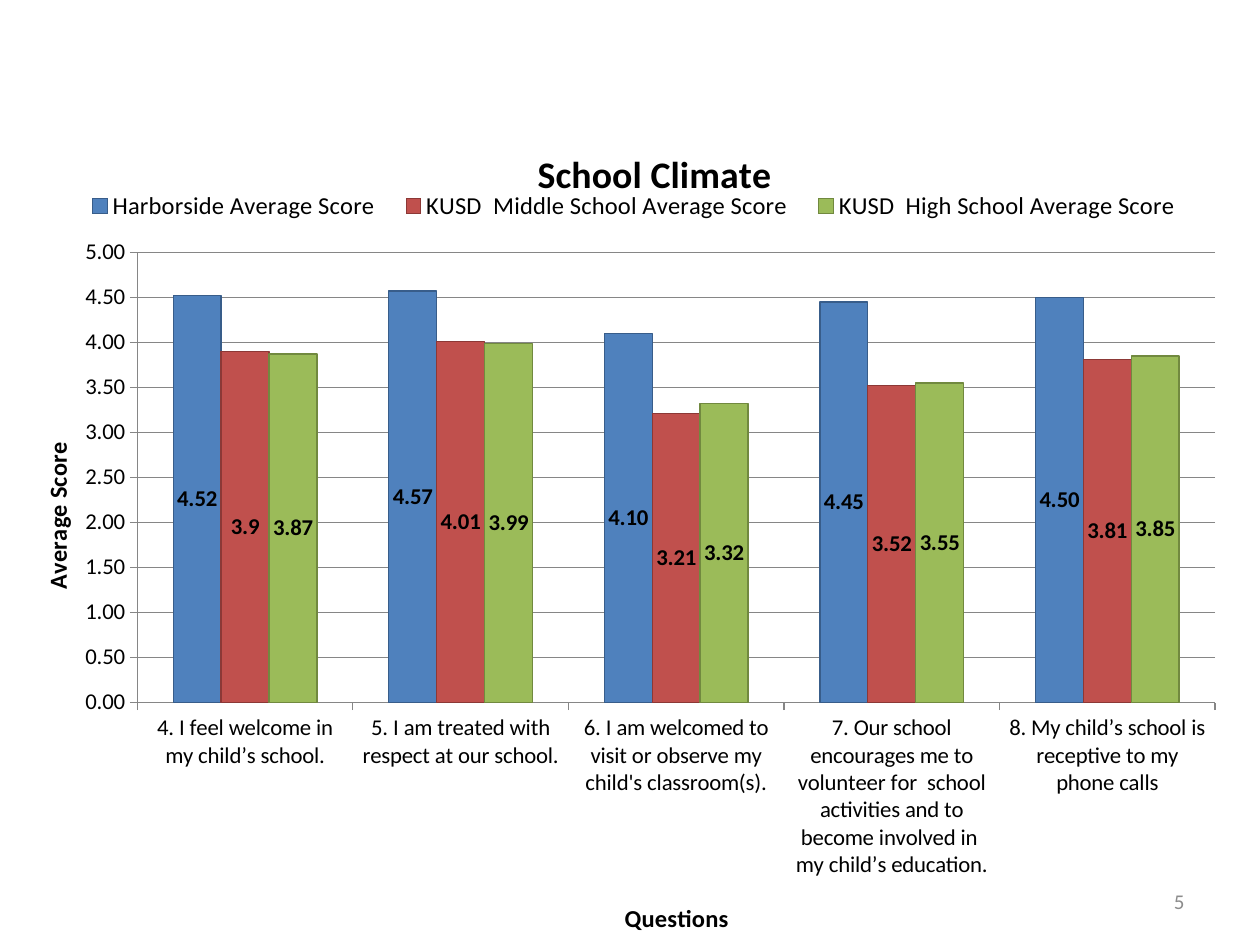
from lxml.etree import SubElement
from pptx import Presentation
from pptx.chart.data import CategoryChartData
from pptx.dml.color import RGBColor
from pptx.enum.chart import XL_CHART_TYPE, XL_LABEL_POSITION, XL_LEGEND_POSITION, XL_TICK_MARK
from pptx.enum.text import MSO_ANCHOR, PP_ALIGN
from pptx.oxml.ns import qn
from pptx.util import Inches, Pt

THEME = {
    "font": "Calibri",
    "text": RGBColor.from_string("000000"),
    "muted": RGBColor.from_string("8C8C8C"),
    "grid": RGBColor.from_string("868686"),
    "plot": RGBColor.from_string("FFFFFF"),
    "title": Pt(21.6),
    "legend": Pt(14),
    "label": Pt(13),
    "number": Pt(12),
    "line": Pt(0.75),
}


def style_font(font, size, color="text", bold=False):
    formats = {"name": THEME["font"], "size": THEME[size], "bold": bold}
    for attribute, value in formats.items():
        setattr(font, attribute, value)
    font.color.rgb = THEME[color]


def place(element, index, percents, inner=False):
    for old_layout in element.findall(qn("c:layout")):
        element.remove(old_layout)
    layout = element.makeelement(qn("c:layout"), {})
    element.insert(index, layout)
    manual = SubElement(layout, qn("c:manualLayout"))
    if inner:
        SubElement(manual, qn("c:layoutTarget"), val="inner")
    for mode in ("xMode", "yMode"):
        SubElement(manual, qn(f"c:{mode}"), val="edge")
    for side, percent in zip("xywh", percents):
        SubElement(manual, qn(f"c:{side}"), val=f"{percent / 100:.3f}")


deck = Presentation()
deck.slide_width, deck.slide_height = Inches(10), Inches(7.5)
slide = deck.slides.add_slide(deck.slide_layouts[6])

questions = [
    "4. I feel welcome in my child’s school.",
    "5. I am treated with respect at our school.",
    "6. I am welcomed to visit or observe my child's classroom(s).",
    "7. Our school encourages me to volunteer for  school activities and to become involved in  my child’s education.",
    "8. My child’s school is receptive to my phone calls",
]
schools = [
    ("Harborside Average Score", (4.52, 4.57, 4.1, 4.45, 4.5), "4F81BD", "385D8A", "0.00"),
    ("KUSD  Middle School Average Score", (3.9, 4.01, 3.21, 3.52, 3.81), "C0504D", "8C3836", "General"),
    ("KUSD  High School Average Score", (3.87, 3.99, 3.32, 3.55, 3.85), "9BBB59", "71893F", "General"),
]
scores = CategoryChartData()
scores.categories = questions
for name, averages, *_ in schools:
    scores.add_series(name, averages)

climate = slide.shapes.add_chart(
    XL_CHART_TYPE.COLUMN_CLUSTERED, Inches(0.17), Inches(0.92), Inches(9.58), Inches(6.55), scores
).chart
style_font(climate.font, "label")

bars = climate.plots[0]
for attribute, value in {"gap_width": 150, "overlap": 0, "vary_by_categories": False}.items():
    setattr(bars, attribute, value)

for series, (_, _, fill, outline, number_format) in zip(bars.series, schools):
    series.format.fill.solid()
    series.format.fill.fore_color.rgb = RGBColor.from_string(fill)
    series.format.line.color.rgb = RGBColor.from_string(outline)
    series.format.line.width = THEME["line"]
    label_formats = {
        "show_value": True,
        "position": XL_LABEL_POSITION.CENTER,
        "number_format": number_format,
        "number_format_is_linked": False,
    }
    for attribute, value in label_formats.items():
        setattr(series.data_labels, attribute, value)
    style_font(series.data_labels.font, "label", bold=True)

question_axis, score_axis = climate.category_axis, climate.value_axis
score_formats = {"minimum_scale": 0, "maximum_scale": 5, "major_unit": 0.5, "has_major_gridlines": True}
for attribute, value in score_formats.items():
    setattr(score_axis, attribute, value)
score_axis.tick_labels.number_format = "0.00"
score_axis.tick_labels.number_format_is_linked = False

for axis in (question_axis, score_axis):
    axis.major_tick_mark = XL_TICK_MARK.OUTSIDE
    axis.minor_tick_mark = XL_TICK_MARK.NONE
    style_font(axis.tick_labels.font, "label")
for ruled in (question_axis, score_axis, score_axis.major_gridlines):
    ruled.format.line.color.rgb = THEME["grid"]
    ruled.format.line.width = THEME["line"]

headings = [
    (climate.chart_title, "School Climate", "title", (42.2, 3)),
    (question_axis.axis_title, "Questions", "legend", (49.6, 95.5)),
    (score_axis.axis_title, "Average Score", "legend", (1.2, 39.5)),
]
for heading, wording, size, position in headings:
    heading.text_frame.text = wording
    style_font(heading.text_frame.paragraphs[0].runs[0].font, size, bold=True)
    place(heading._element, 1, position)
score_axis.axis_title.text_frame._txBody.bodyPr.set("rot", "-5400000")

climate.has_legend = True
climate.legend.position = XL_LEGEND_POSITION.TOP
climate.legend.include_in_layout = False
style_font(climate.legend.font, "legend")
place(climate.legend._element, 1, (4, 8.5, 93.5, 5))

plot_area = climate._chartSpace.chart.plotArea
place(plot_area, 0, (9.6, 16.7, 89.3, 55.1), inner=True)
plot_properties = SubElement(plot_area, qn("c:spPr"))
plot_fill = SubElement(plot_properties, qn("a:solidFill"))
SubElement(plot_fill, qn("a:srgbClr"), val=str(THEME["plot"]))

page_number = slide.shapes.add_textbox(Inches(7.17), Inches(6.95), Inches(2.33), Inches(0.4)).text_frame
for attribute, value in {"word_wrap": True, "vertical_anchor": MSO_ANCHOR.MIDDLE, "text": "5"}.items():
    setattr(page_number, attribute, value)
page_number.paragraphs[0].alignment = PP_ALIGN.RIGHT
style_font(page_number.paragraphs[0].runs[0].font, "number", "muted")

deck.save("out.pptx")
